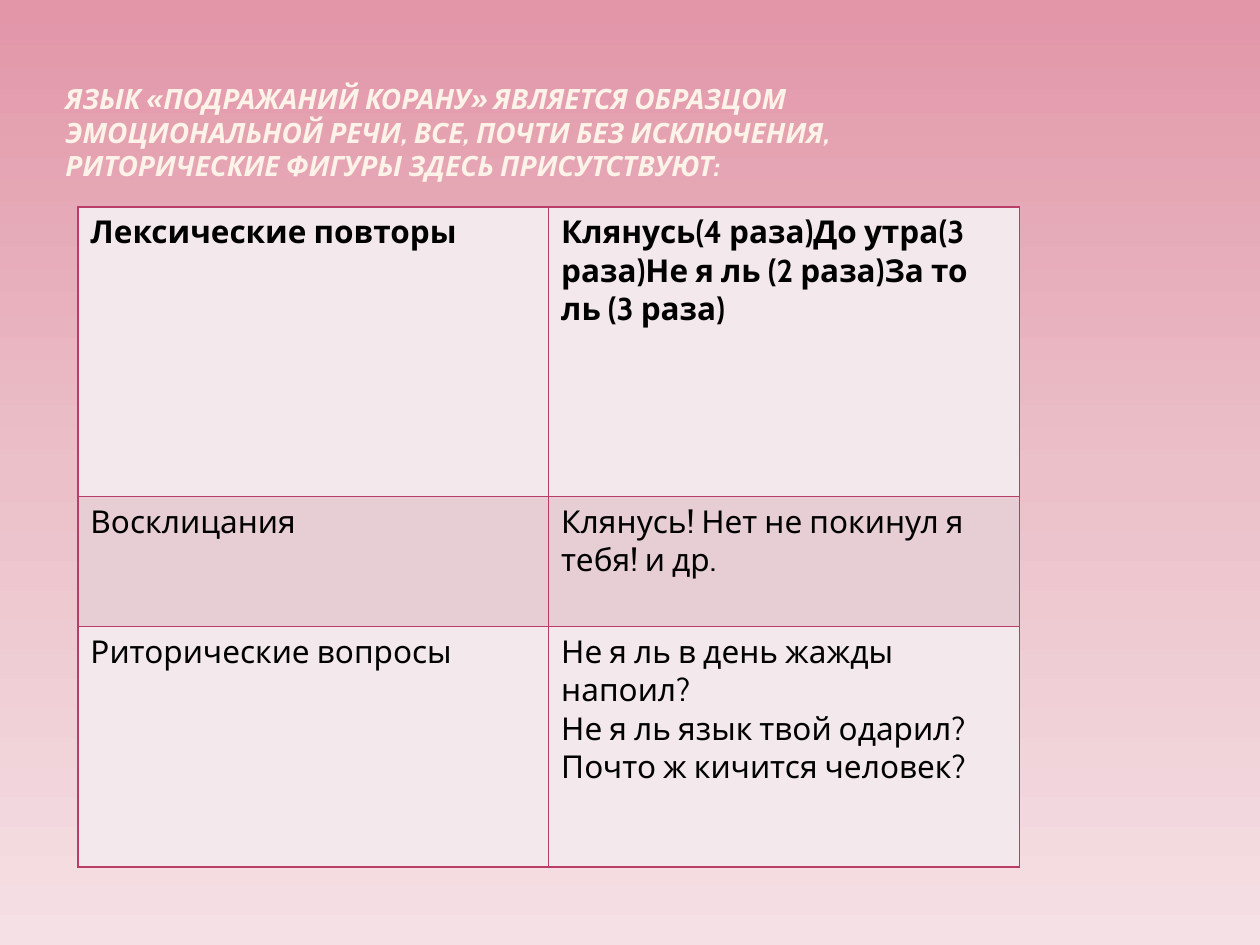
import copy
from dataclasses import dataclass

import lxml.etree
import pptx
import pptx.dml.color
import pptx.enum.text
import pptx.oxml.ns
import pptx.util

Cm = pptx.util.Cm
qn = pptx.oxml.ns.qn


@dataclass(frozen=True)
class Theme:
    font: str = "Cabin"
    title_size: int = 16
    cell_size: int = 18
    title_color: str = "FEF3E8"
    cell_color: str = "000000"
    border: str = "B83D68"
    bands: tuple[str, ...] = ("F3E8EB", "E6CED4")
    background: tuple[str, ...] = ("E296A8", "EBC0C9", "F5E0E5")


@dataclass(frozen=True)
class Figure:
    name: str
    examples: tuple[str, ...]
    height: float
    bold: bool = False


THEME = Theme()
TITLE = ("ЯЗЫК «ПОДРАЖАНИЙ КОРАНУ» ЯВЛЯЕТСЯ ОБРАЗЦОМ ЭМОЦИОНАЛЬНОЙ РЕЧИ, ВСЕ, "
         "ПОЧТИ БЕЗ ИСКЛЮЧЕНИЯ, РИТОРИЧЕСКИЕ ФИГУРЫ ЗДЕСЬ ПРИСУТСТВУЮТ:")
FIGURES = (
    Figure("Лексические повторы",
           ("Клянусь(4 раза)До утра(3 раза)Не я ль (2 раза)За то ль (3 раза)",),
           5.84, bold=True),
    Figure("Восклицания", ("Клянусь! Нет не покинул я тебя! и др.",), 2.62),
    Figure("Риторические вопросы",
           ("Не я ль в день жажды напоил?", "Не я ль язык твой одарил?",
            "Почто ж кичится человек?"), 4.85),
)
COLUMN_WIDTH = 9.49


def rgb(value: str) -> pptx.dml.color.RGBColor:
    return pptx.dml.color.RGBColor.from_string(value)


def set_attributes(target, values: dict) -> None:
    for name, value in values.items():
        setattr(target, name, value)


def write(frame, lines: tuple[str, ...], color: str, size: int,
          bold: bool = False, italic: bool = False) -> None:
    font_format = {"name": THEME.font, "size": pptx.util.Pt(size),
                   "bold": bold, "italic": italic}
    for index, line in enumerate(lines):
        para = frame.add_paragraph() if index else frame.paragraphs[0]
        span = para.add_run()
        span.text = line
        set_attributes(span.font, font_format)
        span.font.color.rgb = rgb(color)


def paint_background(page) -> None:
    fill = page.background.fill
    fill.gradient()
    fill.gradient_angle = 270  # counter-clockwise: top to bottom
    stop_list = next(page._element.iter(qn("a:gsLst")))
    stop_list.append(copy.deepcopy(stop_list[-1]))
    last = len(THEME.background) - 1
    for index, (stop, color) in enumerate(zip(fill.gradient_stops, THEME.background)):
        stop.color.rgb = rgb(color)
        stop.position = index / last


def add_borders(cell) -> None:
    properties = cell._tc.get_or_add_tcPr()
    for index, side in enumerate(("lnL", "lnR", "lnT", "lnB")):
        line = lxml.etree.Element(qn(f"a:{side}"), w=str(pptx.util.Pt(1)))
        solid = lxml.etree.SubElement(line, qn("a:solidFill"))
        lxml.etree.SubElement(solid, qn("a:srgbClr"), val=THEME.border)
        properties.insert(index, line)


def add_title(page) -> None:
    box = page.shapes.add_textbox(Cm(1.19), Cm(1.6), Cm(19.8), Cm(2.08))
    set_attributes(box.text_frame, {
        "word_wrap": True,
        "vertical_anchor": pptx.enum.text.MSO_ANCHOR.BOTTOM,
        "margin_left": Cm(0.13), "margin_right": Cm(0.13),
        "margin_top": 0, "margin_bottom": 0,
    })
    write(box.text_frame, (TITLE,), THEME.title_color, THEME.title_size,
          bold=True, italic=True)


def add_figures_table(page) -> None:
    height = sum(figure.height for figure in FIGURES)
    table = page.shapes.add_table(len(FIGURES), 2, Cm(1.57), Cm(4.17),
                                  Cm(2 * COLUMN_WIDTH), Cm(height)).table
    for column in table.columns:
        column.width = Cm(COLUMN_WIDTH)
    for index, figure in enumerate(FIGURES):
        row = table.rows[index]
        row.height = Cm(figure.height)
        for cell, lines in zip(row.cells, ((figure.name,), figure.examples)):
            cell.fill.solid()
            cell.fill.fore_color.rgb = rgb(THEME.bands[index % len(THEME.bands)])
            add_borders(cell)
            write(cell.text_frame, lines, THEME.cell_color, THEME.cell_size, figure.bold)


def main() -> None:
    deck = pptx.Presentation()
    set_attributes(deck, {"slide_width": Cm(25.4), "slide_height": Cm(19.05)})
    page = deck.slides.add_slide(deck.slide_layouts[6])
    paint_background(page)
    # Heading
    add_title(page)
    # Rhetorical figures with their examples
    add_figures_table(page)
    deck.save("out.pptx")


if __name__ == "__main__":
    main()
